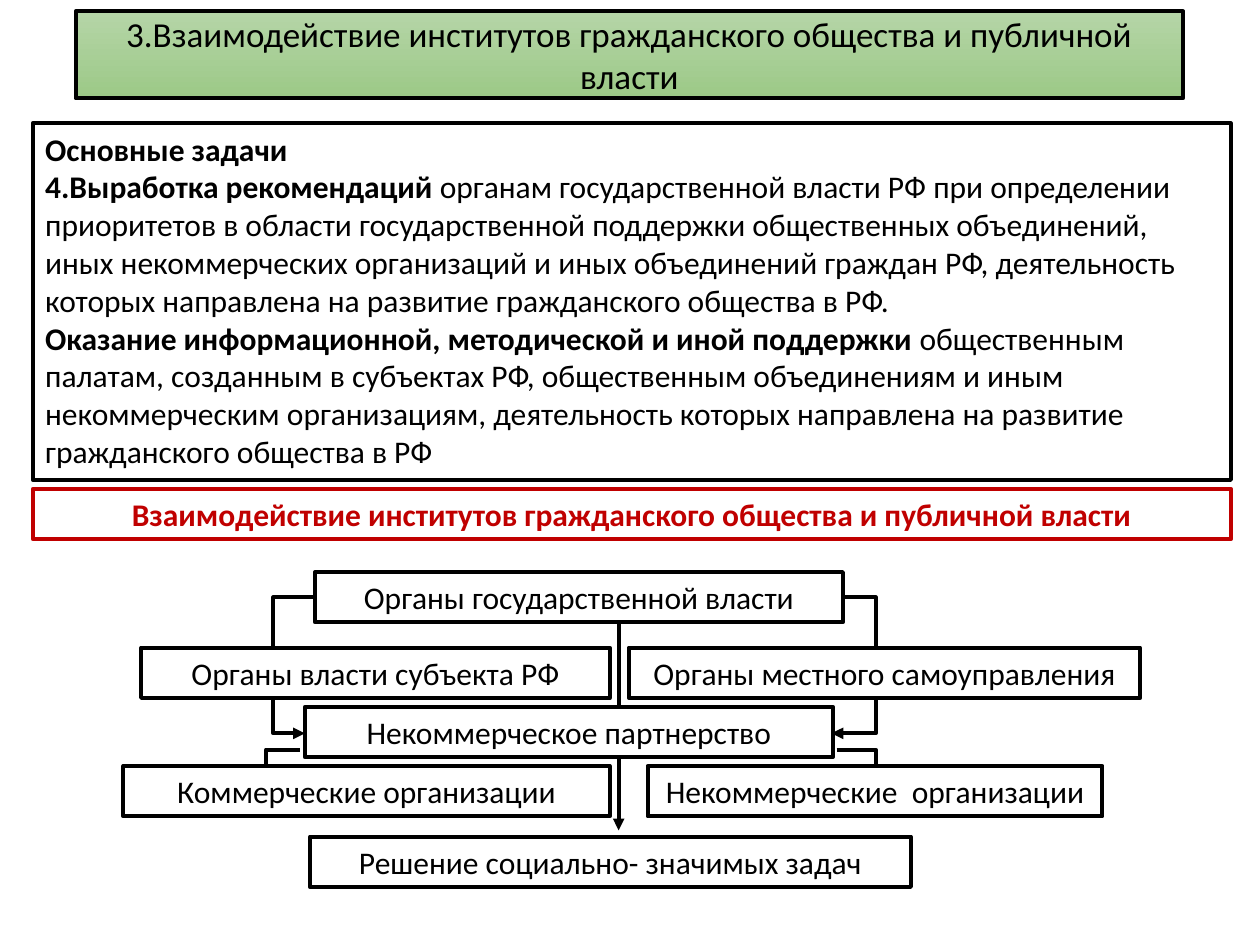
from lxml.etree import SubElement
from pptx import Presentation
from pptx.dml.color import RGBColor
from pptx.enum.shapes import MSO_CONNECTOR, MSO_SHAPE
from pptx.enum.text import MSO_ANCHOR, MSO_AUTO_SIZE, PP_ALIGN
from pptx.oxml.ns import qn
from pptx.util import Inches, Pt

BLACK, WHITE, RED = "000000", "FFFFFF", "C00000"
TASKS = [
    [("Основные задачи", True)],
    [("4.Выработка рекомендаций", True),
     (" органам государственной власти РФ при определении приоритетов в области "
      "государственной поддержки общественных объединений, иных некоммерческих "
      "организаций и иных объединений граждан РФ, деятельность которых направлена "
      "на развитие гражданского общества в РФ.", False)],
    [("Оказание информационной, методической и иной поддержки", True),
     (" общественным палатам, созданным в субъектах РФ, общественным объединениям "
      "и иным некоммерческим организациям, деятельность которых направлена на "
      "развитие гражданского общества в РФ", False)],
]
NODES = [
    ("Некоммерческие  организации", 5.14, 6.08, 3.61),
    ("Коммерческие организации", 0.98, 6.08, 3.86),
    ("Некоммерческое партнерство", 2.42, 5.61, 4.19),
    ("Органы местного самоуправления", 4.99, 5.14, 4.06),
    ("Органы власти субъекта РФ", 1.12, 5.14, 3.72),
    ("Органы государственной власти", 2.5, 4.54, 4.19),
    ("Решение социально- значимых задач", 2.46, 6.64, 4.77),
]
BENDS = [
    (6.69, 4.74, 6.6, 5.82, 6.95),
    (6.64, 5.95, 7.02, 6.28, 6.95),
    (2.38, 5.95, 1.84, 6.21, 2.11),
    (2.5, 4.74, 2.42, 5.82, 2.17),
]


def tint(code):
    """Turn a hex string into a colour."""
    return RGBColor.from_string(code)


def write(frame, paras, size, color, align):
    """Fill a text frame with paragraphs of (text, bold) runs."""
    for i, runs in enumerate(paras):
        para = frame.paragraphs[0] if i == 0 else frame.add_paragraph()
        para.alignment = align
        for text, bold in runs:
            run = para.add_run()
            run.text = text
            run.font.color.rgb = tint(color)
            style = {"name": "Calibri", "size": Pt(size), "bold": bold}
            for key, value in style.items():
                setattr(run.font, key, value)


def box(slide, area, paras, size=18, color=BLACK, align=PP_ALIGN.CENTER):
    """Add an outlined white box with text and return it."""
    shape = slide.shapes.add_shape(MSO_SHAPE.RECTANGLE, *map(Inches, area))
    shape.shadow.inherit = False
    shape.fill.solid()
    shape.fill.fore_color.rgb = tint(WHITE)
    shape.line.color.rgb = tint(color)
    shape.line.width = Pt(2.25)
    frame = shape.text_frame
    style = {"word_wrap": True, "vertical_anchor": MSO_ANCHOR.TOP,
             "auto_size": MSO_AUTO_SIZE.SHAPE_TO_FIT_TEXT}
    for key, value in style.items():
        setattr(frame, key, value)
    write(frame, paras, size, color, align)
    return shape


def title(slide, text):
    """Add the heading with its green gradient."""
    shape = box(slide, (0.6, 0.09, 8.79, 0.69), [[(text, False)]], 20)
    shape.text_frame.auto_size = MSO_AUTO_SIZE.NONE
    shape.text_frame.vertical_anchor = MSO_ANCHOR.MIDDLE
    shape.fill.gradient()
    shape.fill.gradient_angle = 270
    for stop, code in zip(shape.fill.gradient_stops, ("B5D5A7", "9CC987")):
        stop.color.rgb = tint(code)


def arrow(slide, x1, y1, x2, y2, bend=None):
    """Add an arrow, straight or with its elbow at x = bend."""
    kind = MSO_CONNECTOR.STRAIGHT if bend is None else MSO_CONNECTOR.ELBOW
    link = slide.shapes.add_connector(kind, *map(Inches, (x1, y1, x2, y2)))
    link.line.color.rgb = tint(BLACK)
    link.line.width = Pt(2.25)
    props = link._element.spPr
    SubElement(link.line._get_or_add_ln(), qn("a:tailEnd"), type="triangle")
    SubElement(props, qn("a:effectLst"))
    if bend is not None:
        ratio = round((bend - x1) / (x2 - x1) * 100000)
        guides = props.find(qn("a:prstGeom")).get_or_add_avLst()
        SubElement(guides, qn("a:gd"), name="adj1", fmla=f"val {ratio}")


def main():
    """Build and save the slide."""
    deck = Presentation()
    deck.slide_width, deck.slide_height = Inches(10), Inches(7.5)
    slide = deck.slides.add_slide(deck.slide_layouts[6])
    topic = "Взаимодействие институтов гражданского общества и публичной власти"
    title(slide, "3." + topic)
    box(slide, (0.26, 0.98, 9.51, 2.83), TASKS, align=PP_ALIGN.LEFT)
    box(slide, (0.26, 3.88, 9.51, 0.4), [[(topic, True)]], color=RED)
    for bend in BENDS:
        arrow(slide, *bend)
    arrow(slide, 4.91, 4.94, 4.91, 6.59)
    for text, left, top, width in NODES:
        box(slide, (left, top, width, 0.4), [[(text, False)]])
    deck.save("out.pptx")


if __name__ == "__main__":
    main()
